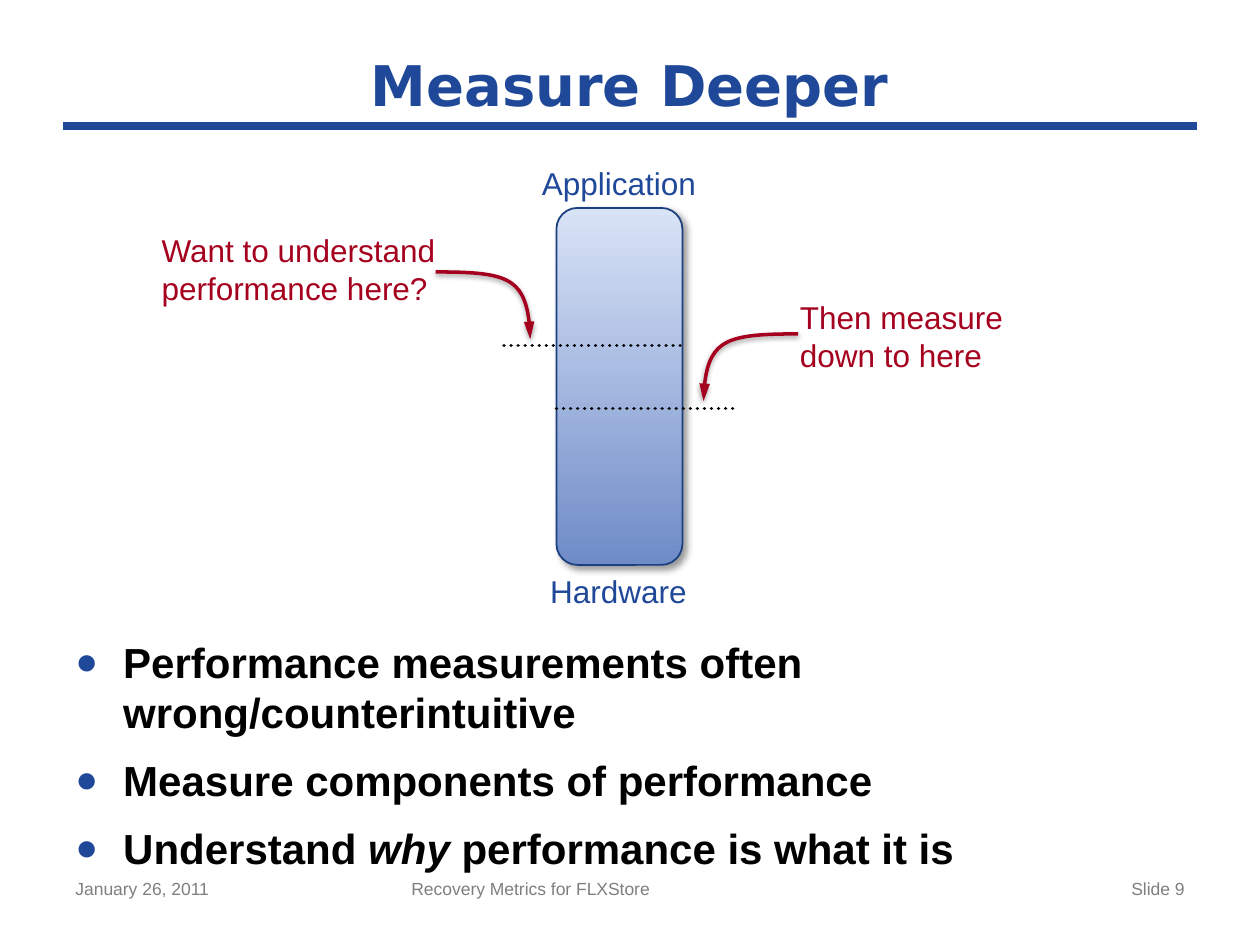
from lxml import etree
from pptx import Presentation
from pptx import util as u
from pptx.dml.color import RGBColor
from pptx.enum import dml, shapes, text
from pptx.oxml import ns

COLUMNS, ROWS = 120, 90
CELL = u.Inches(10) / COLUMNS

BLUE = RGBColor(0x1F, 0x48, 0x99)
OUTLINE = RGBColor(0x1B, 0x3F, 0x7F)
DEEP = RGBColor(0x6F, 0x8C, 0xC7)
PALE = RGBColor(0xD9, 0xE3, 0xF7)
RED = RGBColor(0xA5, 0x00, 0x1E)
GRAY = RGBColor(0x7F, 0x7F, 0x7F)
BLACK = RGBColor(0, 0, 0)

BULLETS = (
    ("Performance measurements often wrong/counterintuitive",),
    ("Measure components of performance",),
    ("Understand ", "why", " performance is what it is"),
)


def grid(*cells):
    """Convert grid cells to slide lengths."""
    return [u.Emu(round(cell * CELL)) for cell in cells]


def add_xml(parent, tag, **attributes):
    """Append a DrawingML element and return it."""
    return etree.SubElement(parent, ns.qn(tag), attributes)


def set_shadow(shape, alpha=0, blur=0, distance=0, angle=0):
    """Give a finished shape a black outer shadow, or none when alpha is zero."""
    effects = add_xml(shape._element.spPr, "a:effectLst")
    if alpha:
        shadow = add_xml(
            effects, "a:outerShdw", blurRad=str(u.Pt(blur)),
            dist=str(u.Pt(distance)), dir=str(angle * 60000), rotWithShape="0")
        color = add_xml(shadow, "a:srgbClr", val=str(BLACK))
        add_xml(color, "a:alpha", val=str(alpha * 1000))


def format_runs(paragraph, size, color, font="Arial", bold=False):
    """Apply one font to every run of a paragraph."""
    for run in paragraph.runs:
        run.font.name, run.font.size = font, u.Pt(size)
        run.font.bold, run.font.color.rgb = bold, color


def add_label(slide, box, words, size, color, align="LEFT", wrap=False, **style):
    """Add a one-paragraph text box and return its frame."""
    frame = slide.shapes.add_textbox(*grid(*box)).text_frame
    frame.word_wrap = wrap
    paragraph = frame.paragraphs[0]
    paragraph.text = words
    paragraph.alignment = text.PP_ALIGN[align]
    format_runs(paragraph, size, color, **style)
    return frame


def add_bullets(slide, box, items):
    """Add the bulleted list, with the second part of an item in italics."""
    frame = slide.shapes.add_textbox(*grid(*box)).text_frame
    frame.word_wrap = True
    for index, parts in enumerate(items):
        paragraph = frame.add_paragraph() if index else frame.paragraphs[0]
        paragraph.space_before = u.Pt(10)
        for position, part in enumerate(parts):
            run = paragraph.add_run()
            run.text = part
            run.font.italic = position == 1
        format_runs(paragraph, 24, BLACK, bold=True)
        properties = paragraph._p.get_or_add_pPr()
        indent = u.Inches(0.38)
        properties.set("marL", str(indent))
        properties.set("indent", str(-indent))
        add_xml(add_xml(properties, "a:buClr"), "a:srgbClr", val=str(BLUE))
        add_xml(properties, "a:buSzPct", val="90000")
        add_xml(properties, "a:buFont", typeface="Arial")
        add_xml(properties, "a:buChar", char="●")


def add_rule(slide, left, right, row, color, width, dash=None):
    """Add a horizontal line between two columns."""
    line = slide.shapes.add_connector(
        shapes.MSO_CONNECTOR.STRAIGHT, *grid(left, row, right, row))
    line.line.color.rgb, line.line.width = color, u.Pt(width)
    if dash:
        line.line.dash_style = dash
        line.line._get_or_add_ln().set("cap", "rnd")
    set_shadow(line)


def add_stack(slide, box):
    """Add the shaded column that stands for the system's layers."""
    stack = slide.shapes.add_shape(shapes.MSO_SHAPE.ROUNDED_RECTANGLE, *grid(*box))
    stack.fill.gradient()
    stack.fill.gradient_angle = 90
    for stop, color, position in zip(stack.fill.gradient_stops, (DEEP, PALE), (0, 1)):
        stop.color.rgb, stop.position = color, position
    stack.line.color.rgb, stack.line.width = OUTLINE, u.Pt(1)
    set_shadow(stack, 40, 4, 3, 45)


def add_curved_arrow(slide, left, top, direction):
    """Add an arrow that leaves sideways and bends down."""
    offsets = ((6.6, 0), (8.9, 0.6), (9, 6.4))
    points = [grid(left + direction * x, top + y) for x, y in offsets]
    builder = slide.shapes.build_freeform(*grid(left, top))
    builder.add_line_segments(points, close=False)
    arrow = builder.convert_to_shape()
    outline = arrow._element.spPr.find(".//" + ns.qn("a:path"))
    curve = add_xml(outline, "a:cubicBezTo")
    for segment in outline.findall(ns.qn("a:lnTo")):
        curve.append(segment[0])
        outline.remove(segment)
    arrow.fill.background()
    arrow.line.color.rgb, arrow.line.width = RED, u.Pt(2)
    add_xml(arrow.line._get_or_add_ln(), "a:tailEnd", type="triangle", len="lg")
    set_shadow(arrow, 38, 3.1, 1.6, 90)


def main():
    """Build and save the slide."""
    presentation = Presentation()
    presentation.slide_width, presentation.slide_height = grid(COLUMNS, ROWS)
    slide = presentation.slides.add_slide(presentation.slide_layouts[6])

    add_rule(slide, 6, 114, 12, BLUE, 4.5)
    add_bullets(slide, (6, 60, 108, 27), BULLETS)
    for left, width, words, align in (
            (6, 28, "January 26, 2011", "LEFT"),
            (38, 45, "Recovery Metrics for FLXStore", "LEFT"),
            (86, 28, "Slide 9", "RIGHT")):
        add_label(slide, (left, 83, width, 5.2), words, 10, GRAY, align, wrap=True)
    title = add_label(slide, (6, 4, 108, 8), "Measure Deeper", 32, BLUE, "CENTER",
                      wrap=True, font="DejaVu Sans", bold=True)
    title.vertical_anchor = text.MSO_ANCHOR.MIDDLE

    add_stack(slide, (53, 19.8, 12, 34))
    for box, words, color, align in (
            ((51.1, 53.9, 15.6, 4.8), "Hardware", BLUE, "CENTER"),
            ((50.3, 15, 17.3, 4.8), "Application", BLUE, "CENTER"),
            ((14.2, 21.4, 28.7, 8.5), "Want to understand\vperformance here?", RED, "LEFT"),
            ((75, 27.8, 22, 8.5), "Then measure\vdown to here", RED, "LEFT")):
        frame = add_label(slide, box, words, 18, color, align)
        frame.auto_size = text.MSO_AUTO_SIZE.SHAPE_TO_FIT_TEXT
    for left, right, row in ((48, 65, 32.9), (53, 70, 38.9)):
        add_rule(slide, left, right, row, BLACK, 2, dml.MSO_LINE.ROUND_DOT)
    add_curved_arrow(slide, 41.5, 25.9, 1)
    add_curved_arrow(slide, 76, 31.8, -1)

    presentation.save("out.pptx")


if __name__ == "__main__":
    main()
